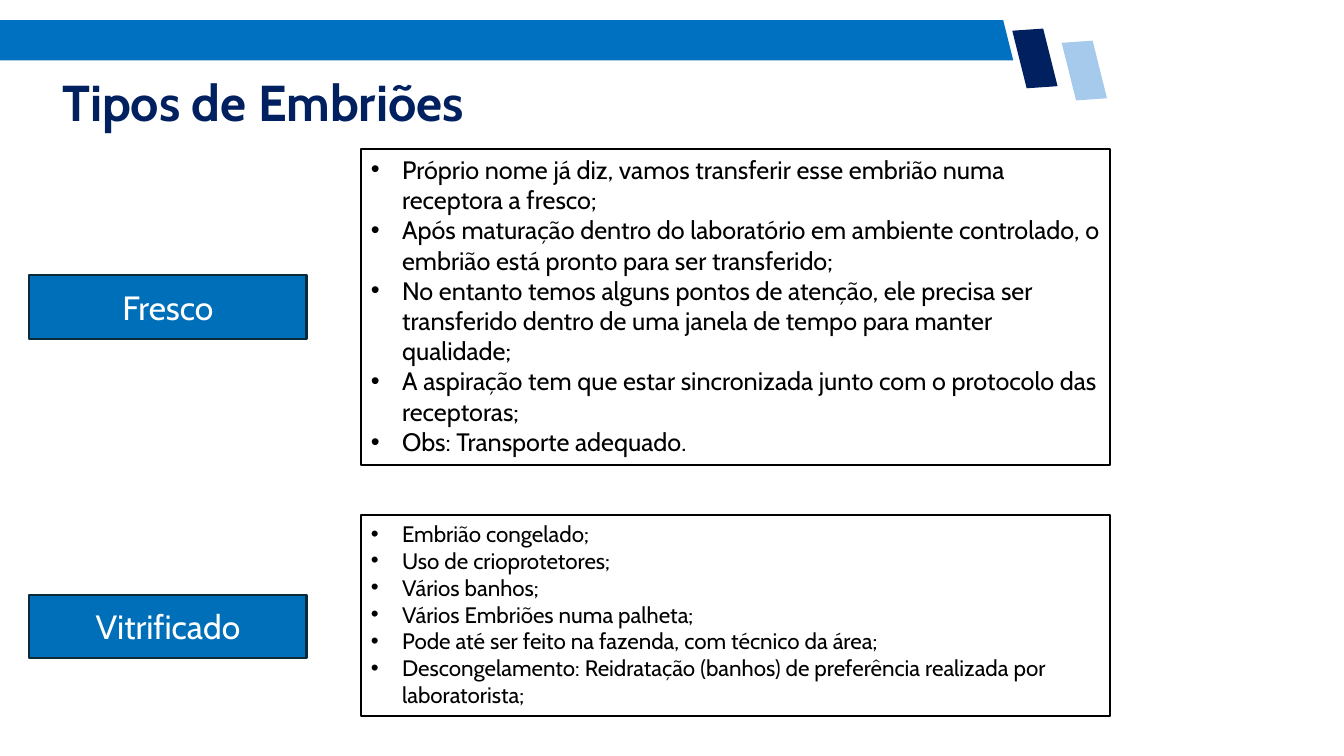
from lxml import etree
from pptx import Presentation
from pptx.dml.color import RGBColor
from pptx.enum.shapes import MSO_SHAPE
from pptx.enum.text import MSO_ANCHOR, MSO_AUTO_SIZE, PP_ALIGN
from pptx.oxml.ns import qn
from pptx.util import Inches, Pt

RECTANGLE = MSO_SHAPE.RECTANGLE
PARALLELOGRAM = MSO_SHAPE.PARALLELOGRAM
TOP, MIDDLE = MSO_ANCHOR.TOP, MSO_ANCHOR.MIDDLE
LEFT, CENTER = PP_ALIGN.LEFT, PP_ALIGN.CENTER
NO_AUTOFIT = MSO_AUTO_SIZE.NONE
TITLE_ONLY = 5

COLORS = {
    "band": "0070C0",
    "navy": "002060",
    "sky": "A6CAEC",
    "label": "006FB9",
    "label_line": "092A39",
    "white": "FFFFFF",
    "black": "000000",
}

LABEL_LEFT, LABEL_WIDTH, LABEL_HEIGHT = 0.29, 2.75, 0.63
DETAIL_LEFT, DETAIL_WIDTH = 3.58, 7.43

# label, label top, detail top, detail height, text size, bullets
EMBRYO_TYPES = [
    ("Fresco", 2.73, 1.48, 3.13, 18, [
        "Próprio nome já diz, vamos transferir esse embrião numa receptora a fresco;",
        "Após maturação dentro do laboratório em ambiente controlado, o embrião está "
        "pronto para ser transferido;",
        "No entanto temos alguns pontos de atenção, ele precisa ser transferido dentro "
        "de uma janela de tempo para manter qualidade;",
        "A aspiração tem que estar sincronizada junto com o protocolo das receptoras;",
        "Obs: Transporte adequado.",
    ]),
    ("Vitrificado", 5.9, 5.11, 1.99, 16, [
        "Embrião congelado;",
        "Uso de crioprotetores;",
        "Vários banhos;",
        "Vários Embriões numa palheta;",
        "Pode até ser feito na fazenda, com técnico da área;",
        "Descongelamento: Reidratação (banhos) de preferência realizada por "
        "laboratorista;",
    ]),
]


class PageBuilder:
    font_name = "Cabin"

    def __init__(self, page):
        self.page = page

    def color(self, name):
        return RGBColor.from_string(COLORS[name])

    def format_para(self, para, size, color, bold=False, align=LEFT):
        para.alignment = align
        para.font.name = self.font_name
        para.font.size = Pt(size)
        para.font.bold = bold
        para.font.color.rgb = self.color(color)

    def shape(self, kind, left, top, width, height, fill, line=None):
        shape = self.page.shapes.add_shape(
            kind, Inches(left), Inches(top), Inches(width), Inches(height))
        shape.shadow.inherit = False
        shape.fill.solid()
        shape.fill.fore_color.rgb = self.color(fill)
        if line:
            shape.line.color.rgb = self.color(line)
            shape.line.width = Pt(1.5)
        else:
            shape.line.fill.background()
        return shape

    def slanted_bar(self, left, top, width, height, fill, rotation=0):
        """Draw a parallelogram that leans to the left."""
        bar = self.shape(PARALLELOGRAM, left, top, width, height, fill)
        bar.rotation = rotation
        bar._element.spPr.find(qn("a:xfrm")).set("flipH", "1")

    def title(self, text):
        title = self.page.shapes.title
        title.left, title.top = Inches(0.52), Inches(0.6)
        title.width, title.height = Inches(8.36), Inches(0.89)
        frame = title.text_frame
        frame.text = text
        frame.auto_size = NO_AUTOFIT
        frame.vertical_anchor = MIDDLE
        para = frame.paragraphs[0]
        para.line_spacing = 0.9
        self.format_para(para, 36, "navy", bold=True)

    def label(self, text, top):
        box = self.shape(RECTANGLE, LABEL_LEFT, top, LABEL_WIDTH, LABEL_HEIGHT,
                         "label", "label_line")
        box.text_frame.text = text
        box.text_frame.vertical_anchor = MIDDLE
        self.format_para(box.text_frame.paragraphs[0], 24, "white", align=CENTER)

    def bullet_box(self, items, top, height, size):
        box = self.shape(RECTANGLE, DETAIL_LEFT, top, DETAIL_WIDTH, height,
                         "white", "black")
        frame = box.text_frame
        frame.word_wrap = True
        frame.vertical_anchor = TOP
        frame.text = "\n".join(items)
        for para in frame.paragraphs:
            self.add_bullet(para)
            self.format_para(para, size, "black")

    def add_bullet(self, para):
        properties = para._p.get_or_add_pPr()
        indent = Inches(0.31)
        properties.set("marL", str(indent))
        properties.set("indent", str(-indent))
        etree.SubElement(properties, qn("a:buFont")).set("typeface", "Arial")
        etree.SubElement(properties, qn("a:buChar")).set("char", "•")


def main():
    deck = Presentation()
    deck.slide_width, deck.slide_height = Inches(13.33), Inches(7.5)
    builder = PageBuilder(deck.slides.add_slide(deck.slide_layouts[TITLE_ONLY]))

    builder.slanted_bar(-0.24, 0.2, 10.29, 0.4, "band")
    builder.slanted_bar(10.06, 0.29, 0.41, 0.58, "navy", rotation=356)
    builder.slanted_bar(10.55, 0.41, 0.41, 0.58, "sky", rotation=356)
    builder.title("Tipos de Embriões")
    for name, label_top, top, height, size, items in EMBRYO_TYPES:
        builder.label(name, label_top)
        builder.bullet_box(items, top, height, size)

    deck.save("out.pptx")


if __name__ == "__main__":
    main()
